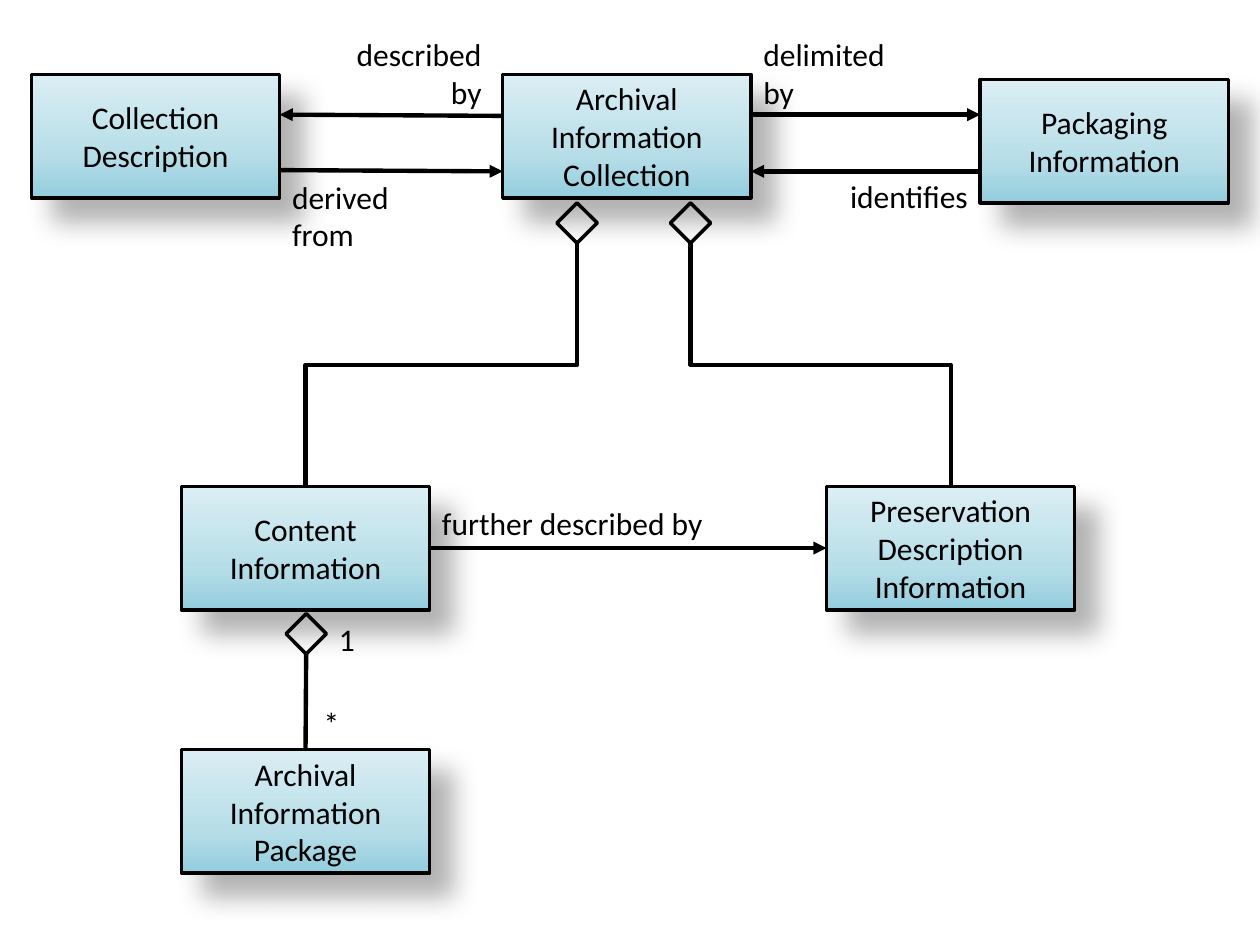
from pptx import Presentation
from pptx.dml.color import RGBColor
from pptx.enum.shapes import MSO_CONNECTOR, MSO_SHAPE
from pptx.enum.text import MSO_ANCHOR, PP_ALIGN
from pptx.oxml import parse_xml
from pptx.oxml.ns import nsdecls, qn
from pptx.util import Inches, Pt

BLACK = RGBColor(0x00, 0x00, 0x00)
GRADIENT = [
    (0, RGBColor(0x93, 0xCD, 0xDD)),
    (35, RGBColor(0xB7, 0xDE, 0xE8)),
    (100, RGBColor(0xDB, 0xEE, 0xF4)),
]
FONT = "Calibri"
BOX_WIDTH, BOX_HEIGHT = 1.97, 0.98
DIAMOND_SIZE = 0.32
TOP, BOTTOM, LEFT, RIGHT = 0, 2, 1, 3  # connection sites of a rectangle


def write_text(shape, text, align):
    frame = shape.text_frame
    frame.word_wrap = True
    frame.text = text
    for para in frame.paragraphs:
        para.alignment = align
        for span in para.runs:
            span.font.name = FONT
            span.font.size = Pt(18)
            span.font.color.rgb = BLACK


def outline(shape, width):
    shape.line.color.rgb = BLACK
    shape.line.width = Pt(width)


def add_entity(page, left, top, text):
    """Gradient box with a soft shadow and a centred name."""
    box = page.shapes.add_shape(MSO_SHAPE.RECTANGLE, Inches(left), Inches(top),
                                Inches(BOX_WIDTH), Inches(BOX_HEIGHT))
    outline(box, 2)
    box.fill.gradient()
    box.fill.gradient_angle = 90
    properties = box._element.spPr
    stops = properties.find(qn("a:gradFill")).find(qn("a:gsLst"))
    for stop in list(stops):
        stops.remove(stop)
    for position, color in GRADIENT:
        stops.append(parse_xml(
            f'<a:gs {nsdecls("a")} pos="{position * 1000}">'
            f'<a:srgbClr val="{color}"/></a:gs>'))
    properties.append(parse_xml(
        f'<a:effectLst {nsdecls("a")}><a:outerShdw blurRad="{Pt(15)}" '
        f'dist="{Pt(18)}" dir="2700000" algn="tl" rotWithShape="0">'
        f'<a:srgbClr val="{BLACK}"><a:alpha val="30000"/></a:srgbClr>'
        '</a:outerShdw></a:effectLst>'))
    write_text(box, text, PP_ALIGN.CENTER)
    box.text_frame.vertical_anchor = MSO_ANCHOR.MIDDLE
    return box


def add_diamond(page, center, top):
    """Hollow aggregation mark."""
    diamond = page.shapes.add_shape(
        MSO_SHAPE.DIAMOND, Inches(center - DIAMOND_SIZE / 2), Inches(top),
        Inches(DIAMOND_SIZE), Inches(DIAMOND_SIZE))
    diamond.shadow.inherit = False
    diamond.fill.background()
    outline(diamond, 2)
    return diamond


def add_line(page, start=(0, 0), end=(0, 0), arrow=False, kind=MSO_CONNECTOR.STRAIGHT):
    line = page.shapes.add_connector(kind, Inches(start[0]), Inches(start[1]),
                                     Inches(end[0]), Inches(end[1]))
    outline(line, 2.5)
    if arrow:
        line.line._get_or_add_ln().append(
            parse_xml(f'<a:tailEnd {nsdecls("a")} type="triangle"/>'))
    line._element.spPr.append(parse_xml(f'<a:effectLst {nsdecls("a")}/>'))
    return line


def join(line, start, start_site, end, end_site):
    line.begin_connect(start, start_site)
    line.end_connect(end, end_site)


def add_branch(page, diamond, box):
    """Elbow that leaves the diamond downwards and enters the box from above."""
    line = add_line(page, kind=MSO_CONNECTOR.ELBOW)
    join(line, diamond, BOTTOM, box, TOP)
    start_x = diamond.left + diamond.width // 2
    start_y = diamond.top + diamond.height
    end_x, end_y = box.left + box.width // 2, box.top
    # The elbow is turned a quarter, so its width runs down the page
    width, height = end_y - start_y, abs(end_x - start_x)
    line.left = (start_x + end_x - width) // 2
    line.top = (start_y + end_y - height) // 2
    line.width, line.height = width, height
    frame = line._element.spPr.find(qn("a:xfrm"))
    goes_right = end_x > start_x
    frame.set("rot", "16200000" if goes_right else "5400000")
    frame.set("flipH", "1" if goes_right else "0")
    frame.set("flipV", "0")


def add_label(page, left, top, width, height, text, align=PP_ALIGN.LEFT, inset=0.05):
    label = page.shapes.add_textbox(Inches(left), Inches(top), Inches(width), Inches(height))
    write_text(label, text, align)
    label.text_frame.margin_top = Inches(inset)


def add_collection_row(page):
    """Top row: the collection, its description and its packaging."""
    collection = add_entity(page, 3.99, 0.59, "Archival Information Collection")
    add_entity(page, 0.25, 0.59, "Collection\nDescription")
    add_entity(page, 7.78, 0.63, "Packaging Information")
    for start, end in [((3.99, 0.92), (2.22, 0.91)), ((2.22, 1.35), (3.99, 1.36)),
                       ((5.96, 0.91), (7.78, 0.91)), ((7.78, 1.36), (5.96, 1.36))]:
        add_line(page, start, end, arrow=True)
    add_label(page, 2.22, 0.28, 1.7, 0.66, "described\nby", PP_ALIGN.RIGHT, inset=0)
    add_label(page, 2.22, 1.36, 1.77, 0.71, "derived\nfrom")
    add_label(page, 5.96, 0.28, 1.82, 0.66, "delimited\nby", inset=0)
    add_label(page, 5.96, 1.36, 1.82, 0.4, "identifies", PP_ALIGN.RIGHT)
    return collection


def add_content_tree(page):
    """Lower part: content, preservation description and package."""
    content = add_entity(page, 1.44, 3.86, "Content Information")
    preservation = add_entity(page, 6.56, 3.86, "Preservation Description\nInformation")
    package = add_entity(page, 1.44, 5.95, "Archival Information Package")

    # Aggregation into the collection
    add_branch(page, add_diamond(page, 4.58, 1.61), content)
    add_branch(page, add_diamond(page, 5.48, 1.61), preservation)

    # Content to preservation description
    join(add_line(page, arrow=True), content, RIGHT, preservation, LEFT)
    add_label(page, 3.41, 3.95, 2.84, 0.4, "further described by")

    # One content to many packages
    join(add_line(page), package, TOP, add_diamond(page, 2.43, 4.87), BOTTOM)
    add_label(page, 2.59, 4.87, 0.38, 0.4, "1")
    add_label(page, 2.47, 5.54, 0.38, 0.4, "*")


def main():
    deck = Presentation()
    deck.slide_width, deck.slide_height = Inches(10), Inches(7.5)
    page = deck.slides.add_slide(deck.slide_layouts[6])
    add_collection_row(page)
    add_content_tree(page)
    deck.save("out.pptx")


if __name__ == "__main__":
    main()
